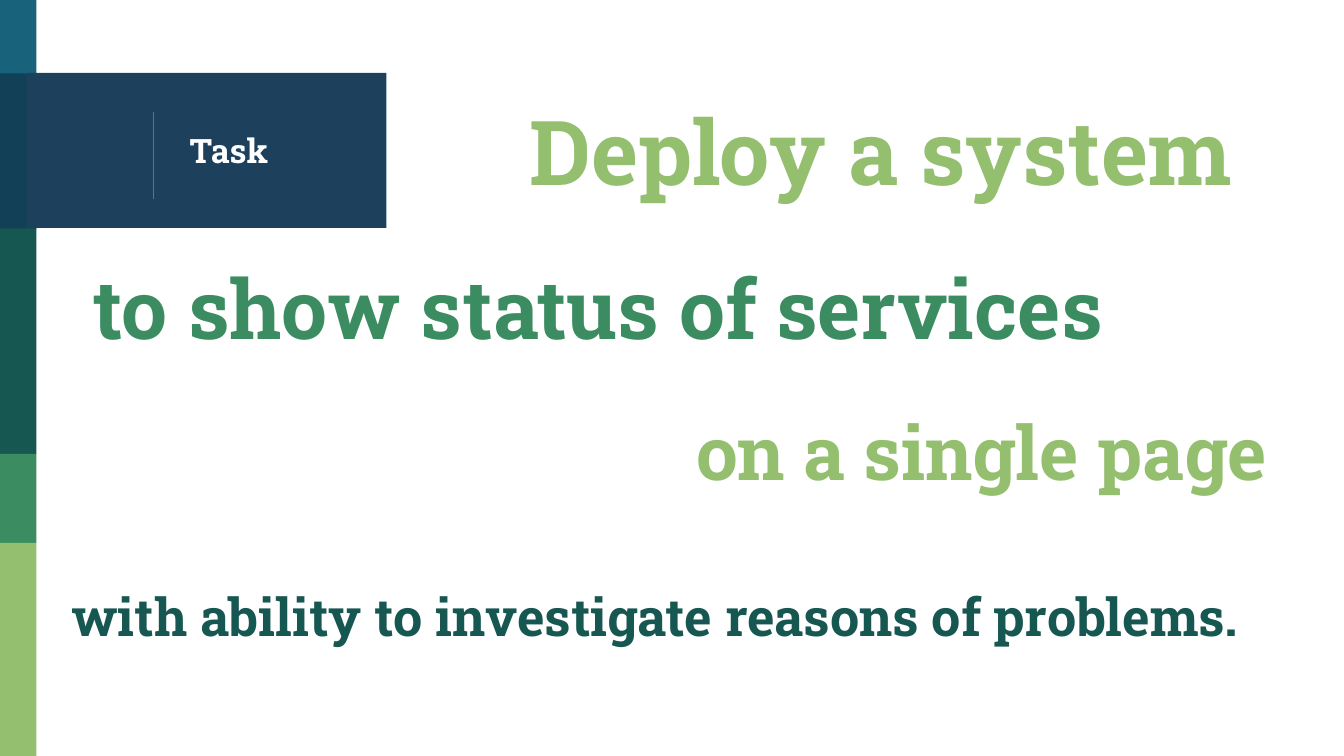
"""Build the task slide with its colour strip, label and four-part statement."""
from dataclasses import dataclass

from lxml.etree import SubElement
from pptx import Presentation
from pptx.dml.color import RGBColor
from pptx.enum.shapes import MSO_CONNECTOR, MSO_SHAPE
from pptx.enum.text import MSO_ANCHOR, MSO_AUTO_SIZE, PP_ALIGN
from pptx.oxml.ns import qn
from pptx.shapes.autoshape import Shape
from pptx.slide import Slide
from pptx.util import Pt

FONT = "Roboto Slab"
LIME, GREEN, PINE, NAVY, WHITE = "94BF6E", "3B8D61", "165751", "1D405D", "FFFFFF"
INSET = 7.2


@dataclass
class Box:
    left: float
    top: float
    width: float
    height: float
    fill: str


@dataclass
class Phrase:
    text: str
    left: float
    top: float
    width: float
    height: float
    size: float
    color: str
    align: PP_ALIGN = PP_ALIGN.LEFT


STRIP = [
    Box(0, top, 19.5, height, fill)
    for top, height, fill in [
        (0, 41.5, "18637B"),
        (39.3, 83.5, "124057"),
        (122.4, 120.8, PINE),
        (243.2, 47.6, GREEN),
        (290.8, 114.2, LIME),
    ]
]
LABEL = Box(14.4, 39.1, 192.6, 83.1, NAVY)
TITLE = Phrase("Deploy a system", 224, 46.8, 496, 67, 48, LIME, PP_ALIGN.CENTER)
PHRASES = [
    Phrase("to show status of services", 42.5, 129, 561.6, 70.6, 44, GREEN),
    Phrase("with ability to investigate reasons of problems.",
           31, 287.3, 689, 85, 28, PINE),
    Phrase("on a single page", 278, 208, 496, 67, 40, LIME, PP_ALIGN.CENTER),
]


def paint(color: str) -> RGBColor:
    return RGBColor.from_string(color)


def write(shape: Shape, text: str, size: float, color: str,
          align: PP_ALIGN = PP_ALIGN.LEFT, indent: float = INSET) -> None:
    frame = shape.text_frame
    frame.text = text
    frame.word_wrap = True
    frame.auto_size = MSO_AUTO_SIZE.NONE
    frame.vertical_anchor = MSO_ANCHOR.MIDDLE
    frame.margin_left = Pt(indent)
    frame.margin_top = frame.margin_right = frame.margin_bottom = Pt(INSET)
    line = frame.paragraphs[0]
    line.alignment = align
    font = line.runs[0].font
    font.name, font.size, font.bold = FONT, Pt(size), True
    font.color.rgb = paint(color)


def draw_box(slide: Slide, box: Box) -> Shape:
    shape = slide.shapes.add_shape(
        MSO_SHAPE.RECTANGLE, Pt(box.left), Pt(box.top), Pt(box.width), Pt(box.height))
    shape.shadow.inherit = False
    shape.fill.solid()
    shape.fill.fore_color.rgb = paint(box.fill)
    shape.line.fill.background()
    return shape


def draw_rule(slide: Slide, left: float, top: float, end: float, color: str) -> None:
    rule = slide.shapes.add_connector(
        MSO_CONNECTOR.STRAIGHT, Pt(left), Pt(top), Pt(left), Pt(end))
    rule.line.color.rgb = paint(color)
    rule.line.width = Pt(0.75)
    SubElement(rule._element.spPr, qn("a:effectLst"))


def place(shape: Shape, phrase: Phrase) -> None:
    shape.left, shape.top = Pt(phrase.left), Pt(phrase.top)
    shape.width, shape.height = Pt(phrase.width), Pt(phrase.height)
    write(shape, phrase.text, phrase.size, phrase.color, phrase.align)


def main() -> None:
    deck = Presentation()
    deck.slide_width, deck.slide_height = Pt(720), Pt(405)
    slide = deck.slides.add_slide(deck.slide_layouts[5])
    for box in STRIP:
        draw_box(slide, box)
    write(draw_box(slide, LABEL), "Task", 18, WHITE, indent=87.2)
    draw_rule(slide, 82.1, 59.8, 106.6, "367EB9")
    place(slide.shapes.title, TITLE)
    for phrase in PHRASES:
        place(slide.shapes.add_textbox(0, 0, 0, 0), phrase)
    deck.save("out.pptx")


if __name__ == "__main__":
    main()
